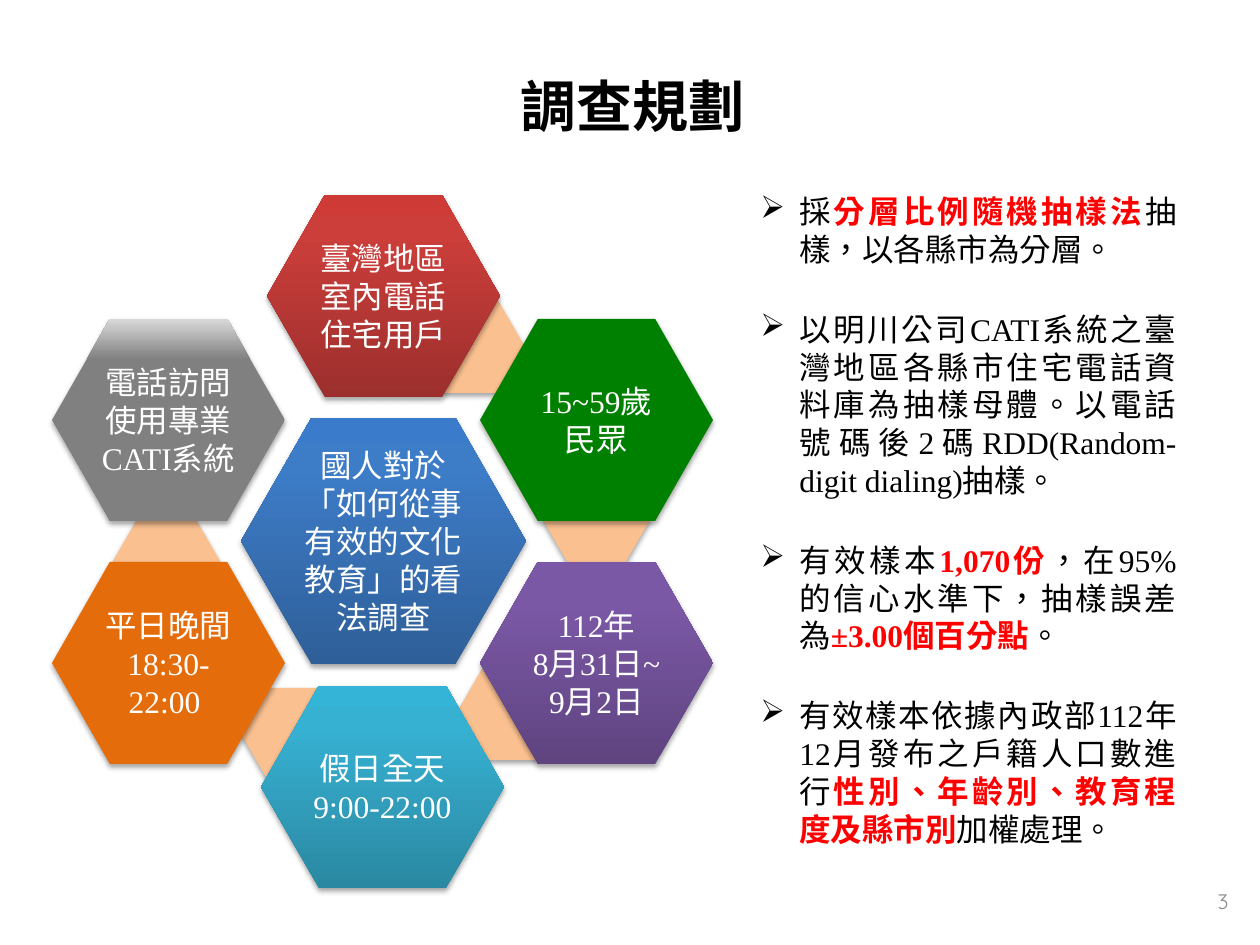
from copy import deepcopy
from dataclasses import dataclass

from lxml.etree import SubElement
from pptx import Presentation
from pptx.dml.color import RGBColor
from pptx.enum.shapes import MSO_SHAPE as SHAPE
from pptx.enum.text import MSO_ANCHOR as ANCHOR, PP_ALIGN as ALIGN
from pptx.oxml.ns import qn
from pptx.util import Pt

PX = 914400 / 126


@dataclass(frozen=True)
class Theme:
    black: str = "000000"
    white: str = "FFFFFF"
    red: str = "FF0000"
    link: str = "FAC090"
    page: str = "8C8C8C"
    serif: str = "Times New Roman"
    sans: str = "Noto Sans CJK SC"
    number: str = "Quicksand"
    title_size: int = 32
    body_size: int = 18
    body_leading: float = 21.6
    page_size: int = 12


T = Theme()
TITLE = "調查規劃"
PAGE = "3"
LEFT, RIGHT, UPPER, LOWER = 52, 480, 319, 562
CELL = (233, 202)
LINK = (107, 92)

LINKS = [(418, 301), (543, 474), (456, 668), (241, 688), (113, 515)]
HEXAGONS = [
    ("國人對於「如何從事有效的文化教育」的看法調查", (241, 418, 285, 246),
     ("2F5F99", "3D7CC7", "3A7CCB")),
    ("臺灣地區室內電話住宅用戶", (267, 195, *CELL), ("9C2F2D", "CB3E3A", "CE3B37")),
    ("15~59歲\n民眾", (RIGHT, UPPER, *CELL), ("008000",)),
    ("112年\n8月31日~\n9月2日", (RIGHT, LOWER, *CELL), ("5F4480", "7B58A6", "7C57A8")),
    ("假日全天9:00-22:00", (261, 686, 243, 202), ("2A88A2", "37B1D2", "34B4D6")),
    ("平日晚間18:30-22:00 ", (LEFT, LOWER, *CELL), ("E46C0A",)),
    ("電話訪問使用專業CATI系統", (LEFT, UPPER, *CELL), ("808080", "808080", "D9D9D9")),
]
STOPS = (0, 0.8, 1)

BULLETS = [
    [("採", False), ("分層比例隨機抽樣法", True), ("抽樣，以各縣市為分層。", False)],
    [("以明川公司CATI系統之臺灣地區各縣市住宅電話資料庫為抽樣母體。"
      "以電話號碼後2碼RDD(Random-digit dialing)抽樣。", False)],
    [("有效樣本", False), ("1,070份", True), ("，在95%的信心水準下，抽樣誤差為", False),
     ("±3.00個百分點", True), ("。", False)],
    [("有效樣本依據內政部112年12月發布之戶籍人口數進行", False),
     ("性別、年齡別、教育程度及縣市別", True), ("加權處理。", False)],
]


def emu(*lengths):
    return [round(n * PX) for n in lengths]


def add_run(p, text, size, color, face, bold=False):
    r = p.add_run()
    r.text = text
    r.font.size = Pt(size)
    r.font.bold = bold
    r.font.name = face
    r.font.color.rgb = RGBColor.from_string(color)
    props = r.font._element
    props.set("lang", "zh-TW")
    SubElement(props, qn("a:ea"), typeface=T.sans)


def add_box(slide, box, anchor=ANCHOR.TOP):
    tf = slide.shapes.add_textbox(*emu(*box)).text_frame
    tf.word_wrap = True
    tf.vertical_anchor = anchor
    return tf


def add_line(slide, box, align, *run):
    p = add_box(slide, box, ANCHOR.MIDDLE).paragraphs[0]
    p.alignment = align
    add_run(p, *run)


def paint(sp, colors):
    if len(colors) == 1:
        sp.fill.solid()
        sp.fill.fore_color.rgb = RGBColor.from_string(colors[0])
        return
    sp.fill.gradient()
    sp.fill.gradient_angle = 90
    stop_list = next(sp._element.spPr.iter(qn("a:gsLst")))
    stop_list.append(deepcopy(stop_list[-1]))
    for stop, position, color in zip(sp.fill.gradient_stops, STOPS, colors):
        stop.position = position
        stop.color.rgb = RGBColor.from_string(color)


def add_shadow(sp):
    sp.shadow.inherit = False
    effects = sp._element.spPr.find(qn("a:effectLst"))
    shadow = SubElement(effects, qn("a:outerShdw"), blurRad=str(Pt(3.1)),
                        dist=str(Pt(1.8)), dir="5400000", rotWithShape="0")
    color = SubElement(shadow, qn("a:srgbClr"), val=T.black)
    SubElement(color, qn("a:alpha"), val="35000")


def add_hexagon(slide, box, colors, adjust, text=""):
    sp = slide.shapes.add_shape(SHAPE.HEXAGON, *emu(*box))
    sp.adjustments[0] = adjust
    sp.line.fill.background()
    paint(sp, colors)
    add_shadow(sp)
    if not text:
        return
    tf = sp.text_frame
    tf.word_wrap = True
    tf.vertical_anchor = ANCHOR.MIDDLE
    tf.margin_left, tf.margin_top, tf.margin_right, tf.margin_bottom = emu(4, 4, 4, 4)
    p = tf.paragraphs[0]
    p.alignment = ALIGN.CENTER
    p.line_spacing = Pt(T.body_leading)
    for i, line in enumerate(text.split("\n")):
        if i:
            p.add_line_break()
        add_run(p, line, T.body_size, T.white, T.serif)


def add_bullets(slide, box):
    tf = add_box(slide, box)
    indent, = emu(39)
    for i, runs in enumerate(BULLETS):
        p = tf.add_paragraph() if i else tf.paragraphs[0]
        p.alignment = ALIGN.JUSTIFY
        p.line_spacing = Pt(T.body_leading)
        if i:
            p.space_before = Pt(24)
        props = p._p.get_or_add_pPr()
        props.set("marL", str(indent))
        props.set("indent", str(-indent))
        color = SubElement(props, qn("a:buClr"))
        SubElement(color, qn("a:srgbClr"), val=T.black)
        SubElement(props, qn("a:buChar"), char="➢")
        for text, strong in runs:
            add_run(p, text, T.body_size, T.red if strong else T.black, T.serif, strong)


def main():
    prs = Presentation()
    prs.slide_width, prs.slide_height = emu(1260, 945)
    slide = prs.slides.add_slide(prs.slide_layouts[6])
    add_line(slide, (0, 55, 1265, 100), ALIGN.CENTER,
             TITLE, T.title_size, T.black, T.sans, True)
    for corner in LINKS:
        add_hexagon(slide, (*corner, *LINK), (T.link,), 0.289)
    for text, box, colors in HEXAGONS:
        add_hexagon(slide, box, colors, 0.286, text)
    add_bullets(slide, (748, 186, 441, 674))
    add_line(slide, (948, 876, 293, 50), ALIGN.RIGHT,
             PAGE, T.page_size, T.page, T.number)
    prs.save("out.pptx")


if __name__ == "__main__":
    main()
